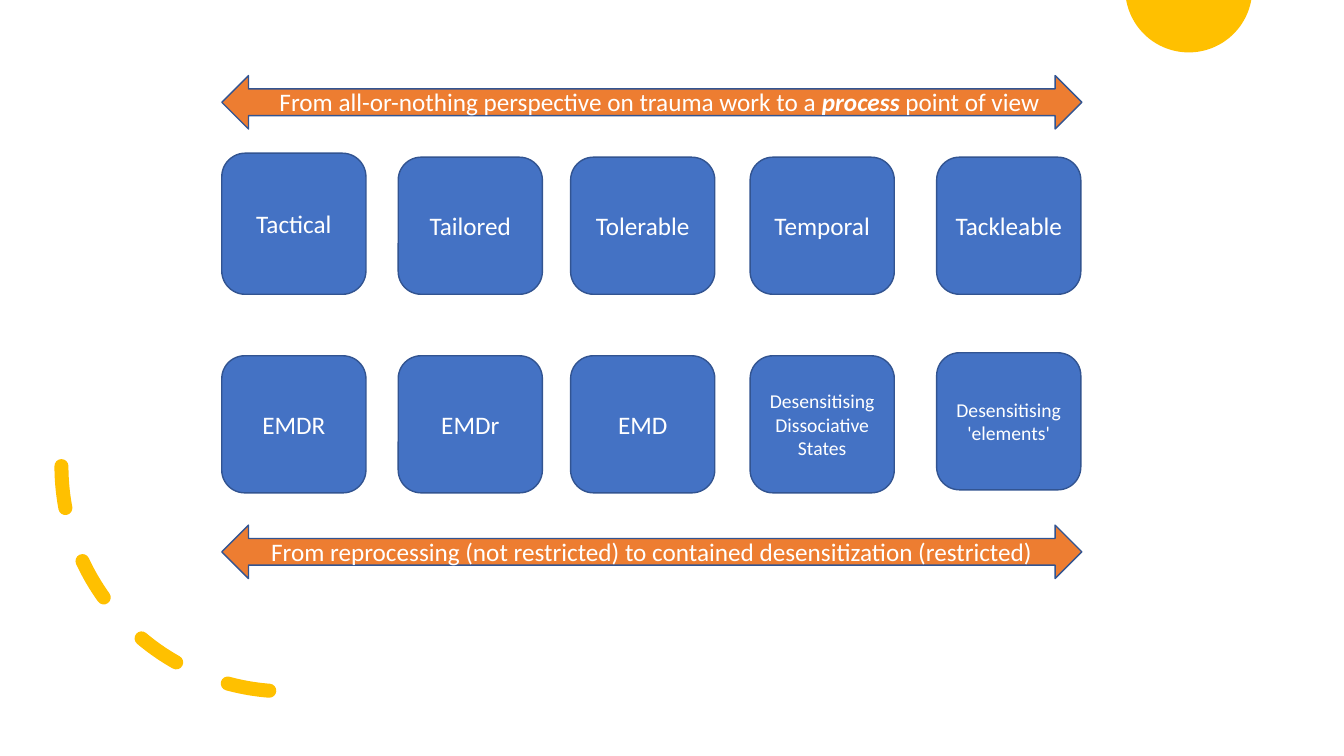
"""Build the slide on moving from all-or-nothing trauma work to a process view."""
from math import cos, pi, sin, asin

from pptx import Presentation
from pptx.dml.color import RGBColor
from pptx.enum.dml import MSO_LINE
from pptx.enum.shapes import MSO_SHAPE as Shape
from pptx.enum.text import MSO_ANCHOR as Anchor, PP_ALIGN as Align
from pptx.util import Inches, Pt

FONT = "Calibri"
WHITE = RGBColor(0xFF, 0xFF, 0xFF)
GOLD = RGBColor(0xFF, 0xC0, 0x00)
BLUE = RGBColor(0x44, 0x72, 0xC4)
ORANGE = RGBColor(0xED, 0x7D, 0x31)
OUTLINE = RGBColor(0x32, 0x54, 0x91)

COLUMN_LEFTS = [2.2, 3.95, 5.66, 7.44, 9.29]
BOX_WIDTH = 1.43
BOX_ROWS = [
    [("Tactical", 18, 1.52, 1.4), ("Tailored", 18, 1.56, 1.36),
     ("Tolerable", 18, 1.56, 1.36), ("Temporal", 18, 1.56, 1.36),
     ("Tackleable", 18, 1.56, 1.36)],
    [("EMDR", 18, 3.53, 1.36), ("EMDr", 18, 3.53, 1.36),
     ("EMD", 18, 3.53, 1.36),
     ("Desensitising Dissociative States", 14, 3.53, 1.36),
     ("Desensitising 'elements'", 14, 3.5, 1.36)],
]
PROCESS_RUNS = [("From all-or-nothing perspective on trauma work to a ", False),
                ("process", True), (" point of view", False)]
RESTRICTION_RUNS = [("From reprocessing (not restricted) to contained "
                     "desensitization (restricted)", False)]
ARROW_LEFT, ARROW_WIDTH, ARROW_HEIGHT = 2.2, 8.53, 0.53
SUN_X, SUN_Y, SUN_RADIUS, SUN_STEPS = 11.79, -0.11, 0.63, 60


def write_text(shape, runs, size):
    """Put one centred white paragraph in a shape; flagged runs are bold italic."""
    frame = shape.text_frame
    frame.word_wrap = True
    paragraph = frame.paragraphs[0]
    paragraph.alignment = Align.CENTER
    paragraph.font.name = FONT
    paragraph.font.size = Pt(size)
    paragraph.font.color.rgb = WHITE
    for text, emphasised in runs:
        run = paragraph.add_run()
        run.text = text
        if emphasised:
            run.font.bold = run.font.italic = True


def add_block(slide, kind, box, fill):
    """Add an outlined, filled preset shape."""
    shape = slide.shapes.add_shape(kind, *map(Inches, box))
    shape.shadow.inherit = False
    shape.fill.solid()
    shape.fill.fore_color.rgb = fill
    shape.line.color.rgb = OUTLINE
    shape.line.width = Pt(1)
    shape.text_frame.vertical_anchor = Anchor.MIDDLE
    return shape


def add_sun(slide):
    """Add the part of the gold disc that lies below the slide's top edge."""
    first = asin(-SUN_Y / SUN_RADIUS)
    angles = [first + (pi - 2 * first) * step / SUN_STEPS
              for step in range(SUN_STEPS + 1)]
    points = [(Inches(SUN_X + SUN_RADIUS * cos(angle)),
               Inches(SUN_Y + SUN_RADIUS * sin(angle))) for angle in angles]
    builder = slide.shapes.build_freeform(*points[0])
    builder.add_line_segments(points[1:], close=True)
    sun = builder.convert_to_shape()
    sun.shadow.inherit = False
    sun.fill.solid()
    sun.fill.fore_color.rgb = GOLD
    sun.line.fill.background()


def add_dashed_arc(slide):
    """Add the round-capped dashed quarter circle at the lower left."""
    arc = slide.shapes.add_shape(Shape.ARC, *map(Inches, (0.61, 2.39, 4.47, 4.47)))
    arc.shadow.inherit = False
    arc.fill.background()
    arc.rotation = 90
    arc._element.spPr.xfrm.set("flipV", "1")
    arc.line.color.rgb = GOLD
    arc.line.width = Pt(10)
    arc.line.dash_style = MSO_LINE.DASH
    arc.line._get_or_add_ln().set("cap", "rnd")


def main():
    """Lay out the slide and save it."""
    presentation = Presentation()
    presentation.slide_width = Inches(13.33)
    presentation.slide_height = Inches(7.5)
    slide = presentation.slides.add_slide(presentation.slide_layouts[6])

    add_sun(slide)
    add_dashed_arc(slide)
    for row in BOX_ROWS:
        for left, (label, size, top, height) in zip(COLUMN_LEFTS, row):
            box = add_block(slide, Shape.ROUNDED_RECTANGLE,
                            (left, top, BOX_WIDTH, height), BLUE)
            write_text(box, [(label, False)], size)

    process_arrow, restriction_arrow = [
        add_block(slide, Shape.LEFT_RIGHT_ARROW,
                  (ARROW_LEFT, top, ARROW_WIDTH, ARROW_HEIGHT), ORANGE)
        for top in (0.75, 5.21)]
    process_label = slide.shapes.add_textbox(
        *map(Inches, (2.46, 0.81, 8.16, 0.4)))
    write_text(process_label, PROCESS_RUNS, 18)
    write_text(restriction_arrow, RESTRICTION_RUNS, 18)

    presentation.save("out.pptx")


if __name__ == "__main__":
    main()
